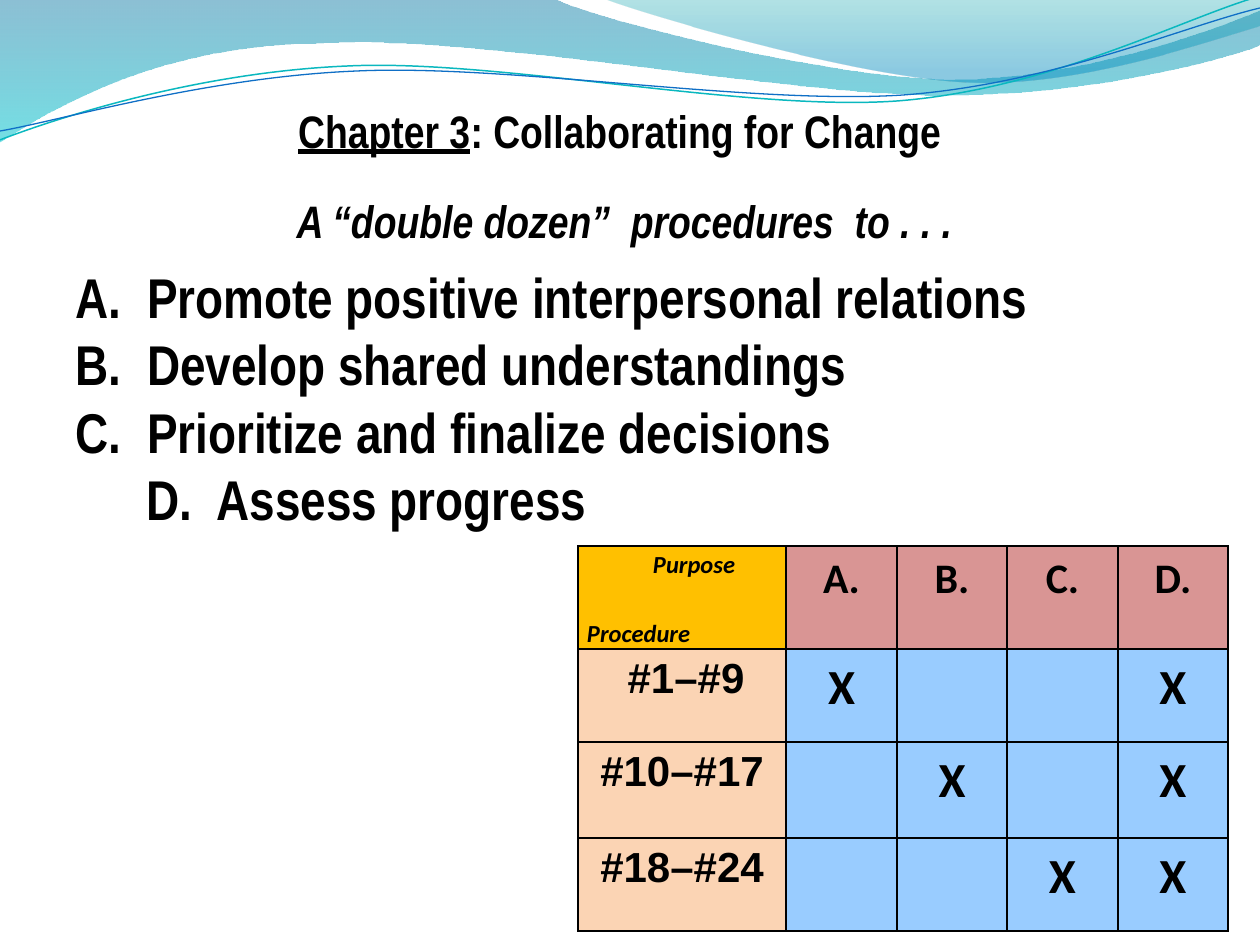
from math import cos, radians, sin

from lxml.etree import SubElement
from pptx import Presentation
from pptx.dml.color import RGBColor
from pptx.enum.text import MSO_ANCHOR, MSO_AUTO_SIZE, PP_ALIGN
from pptx.oxml.ns import qn
from pptx.util import Pt

EMU_PER_PX = 914400 / 126
BLACK = "000000"
TILT = -2.7
TILT_CENTER = (629, 72)
LEFT_WAVE = [
    [(-1, -1)], [(0, -1)], [(554, -1)],
    [(600, 21), (837, 79), (955, 79)],
    [(1075, 79), (1207, 33), (1260, 11)],
    [(1261, 45)],
    [(1239, 55), (1096, 96), (940, 95)],
    [(784, 95), (481, 35), (324, 43)],
    [(162, 44), (58, 105), (-1, 142)],
    [(0, -1)],
]
RIGHT_WAVE = [
    [(604, -1)],
    [(641, 14), (859, 78), (969, 82)],
    [(1079, 87), (1211, 40), (1260, 26)],
    [(1260, 0)], [(604, -1)],
]
TEAL_LINE = [
    [(0, 140)],
    [(60, 117), (199, 72), (349, 66)],
    [(498, 59), (747, 112), (898, 101)],
    [(1050, 89), (1182, 19), (1257, -3)],
]
BLUE_LINE = [
    [(0, 131)],
    [(59, 121), (207, 77), (357, 71)],
    [(508, 64), (752, 105), (903, 95)],
    [(1053, 84), (1184, 26), (1260, 8)],
]
PURPOSES = ["A.", "B.", "C.", "D."]
PROCEDURES = [("#1–#9", "AD"), ("#10–#17", "BD"), ("#18–#24", "CD")]
COLUMN_WIDTHS = [208, 111, 110, 111, 110]
ROW_HEIGHTS = [103, 93, 96, 93]


def px(length):
    return round(length * EMU_PER_PX)


def rgb(value):
    return RGBColor.from_string(value)


def turn(point, degrees):
    cx, cy = TILT_CENTER
    x, y = point[0] - cx, point[1] - cy
    c, s = cos(radians(degrees)), sin(radians(degrees))
    return cx + c * x - s * y, cy + s * x + c * y


def add_outline(slide, segments, close):
    points = [(px(x), px(y)) for segment in segments for x, y in segment]
    builder = slide.shapes.build_freeform(*points[0], scale=1.0)
    builder.add_line_segments(points[1:], close=close)
    outline = builder.convert_to_shape()
    outline.shadow.inherit = False
    steps = iter(list(outline._element.iter(qn("a:lnTo"))))
    for segment in segments[1:]:
        first, *others = [next(steps) for _ in segment]
        if others:
            first.tag = qn("a:cubicBezTo")
            for other in others:
                first.append(other[0])
                other.getparent().remove(other)
    return outline


def add_wave(slide, segments, stops):
    wave = add_outline(slide, segments, True)
    wave.line.fill.background()
    wave.fill.gradient()
    wave.fill.gradient_angle = 270
    for stop, (position, color, _) in zip(wave.fill.gradient_stops, stops):
        stop.position = position
        stop.color.rgb = rgb(color)
    tints = wave._element.spPr.iter(qn("a:srgbClr"))
    for tint, (_, _, opacity) in zip(tints, stops):
        SubElement(tint, qn("a:alpha"), val=str(opacity * 1000))


def add_wave_line(slide, segments, color, width):
    level = [[turn(point, -TILT) for point in segment] for segment in segments]
    wave_line = add_outline(slide, level, False)
    wave_line.rotation = TILT
    wave_line.fill.background()
    wave_line.line.color.rgb = rgb(color)
    wave_line.line.width = Pt(width)


def add_run(paragraph, text, font, size, italic=False, underline=False):
    run = paragraph.add_run()
    run.text = text
    run.font.name = font
    run.font.size = Pt(size)
    run.font.bold = True
    run.font.italic = italic
    run.font.underline = underline
    run.font.color.rgb = rgb(BLACK)


def next_paragraph(frame):
    first = frame.paragraphs[0]
    return frame.add_paragraph() if first.runs else first


def set_margins(paragraph, left=0, right=0):
    properties = paragraph._p.get_or_add_pPr()
    properties.set("marL", str(px(left)))
    properties.set("marR", str(px(right)))
    properties.set("indent", "0")
    return properties


def add_body_line(frame, runs, size, pitch, before, align, **margins):
    paragraph = next_paragraph(frame)
    paragraph.alignment = align
    paragraph.line_spacing = Pt(pitch)
    paragraph.space_before = Pt(before)
    SubElement(set_margins(paragraph, **margins), qn("a:buNone"))
    for text, style in runs:
        add_run(paragraph, text, "Arial Narrow", size, **style)


def fill_body(slide):
    body = slide.placeholders[1]
    body.left, body.top, body.width, body.height = map(px, (63, 97, 1134, 438))
    slide.shapes._spTree.append(body._element)
    frame = body.text_frame
    frame.auto_size = MSO_AUTO_SIZE.NONE
    frame.vertical_anchor = MSO_ANCHOR.TOP
    heading = [("Chapter 3", {"underline": True}),
               (": Collaborating for Change", {})]
    lead_in = [("A “double dozen”  procedures  to . . .", {"italic": True})]
    add_body_line(frame, heading, 26, 31.2, 2, PP_ALIGN.CENTER, right=20)
    add_body_line(frame, lead_in, 26, 30, 21, PP_ALIGN.CENTER, right=10)
    goals = [("A.  Promote positive interpersonal relations", 8.6, 0),
             ("B.  Develop shared understandings", 0, 0),
             ("C.  Prioritize and finalize decisions", 0, 0),
             ("D.  Assess progress", 0, 71)]
    for goal, before, left in goals:
        add_body_line(frame, [(goal, {})], 32, 38.5, before, PP_ALIGN.LEFT,
                      left=left)


def style_cell(cell, color):
    cell.margin_left = cell.margin_right = px(9)
    cell.margin_top = cell.margin_bottom = 0
    properties = cell._tc.get_or_add_tcPr()
    for side in ("lnL", "lnR", "lnT", "lnB"):
        border = SubElement(properties, qn(f"a:{side}"), w=str(Pt(1)))
        solid = SubElement(border, qn("a:solidFill"))
        SubElement(solid, qn("a:srgbClr"), val=BLACK)
    cell.fill.solid()
    cell.fill.fore_color.rgb = rgb(color)


def write_cell(cell, text, font, size, align=PP_ALIGN.CENTER, left=0,
               before=0, italic=False):
    paragraph = next_paragraph(cell.text_frame)
    paragraph.alignment = align
    paragraph.line_spacing = 1.15
    paragraph.space_before = Pt(before)
    set_margins(paragraph, left=left)
    add_run(paragraph, text, font, size, italic=italic)


def add_purpose_table(slide):
    table = slide.shapes.add_table(
        len(ROW_HEIGHTS), len(COLUMN_WIDTHS), px(578), px(546),
        px(sum(COLUMN_WIDTHS)), px(sum(ROW_HEIGHTS))).table
    for column, width in zip(table.columns, COLUMN_WIDTHS):
        column.width = px(width)
    for row, height in zip(table.rows, ROW_HEIGHTS):
        row.height = px(height)

    corner = table.cell(0, 0)
    style_cell(corner, "FFC000")
    write_cell(corner, "Purpose", "Calibri", 14, PP_ALIGN.LEFT, left=66,
               italic=True)
    write_cell(corner, "Procedure", "Calibri", 14, PP_ALIGN.LEFT, before=19.6,
               italic=True)
    for column, purpose in enumerate(PURPOSES, 1):
        style_cell(table.cell(0, column), "D99594")
        write_cell(table.cell(0, column), purpose, "Calibri", 24)
    for row, (procedure, served) in enumerate(PROCEDURES, 1):
        style_cell(table.cell(row, 0), "FBD4B4")
        write_cell(table.cell(row, 0), procedure, "Arial", 24,
                   left=8 if row == 1 else 0)
        for column, purpose in enumerate(PURPOSES, 1):
            style_cell(table.cell(row, column), "99CCFF")
            if purpose[0] in served:
                write_cell(table.cell(row, column), "X", "Calibri", 28)


def main():
    presentation = Presentation()
    presentation.slide_width, presentation.slide_height = px(1260), px(945)
    slide = presentation.slides.add_slide(presentation.slide_layouts[1])
    title = slide.shapes.title._element
    title.getparent().remove(title)
    add_wave(slide, LEFT_WAVE, [(0, "0074A1", 45), (1, "00C6CF", 55)])
    add_wave(slide, RIGHT_WAVE, [(0, "00A1A9", 30), (0.8, "008BBF", 45)])
    add_wave_line(slide, TEAL_LINE, "0AB8BF", 0.85)
    add_wave_line(slide, BLUE_LINE, "0F6FC6", 0.75)
    fill_body(slide)
    add_purpose_table(slide)
    presentation.save("out.pptx")


if __name__ == "__main__":
    main()
